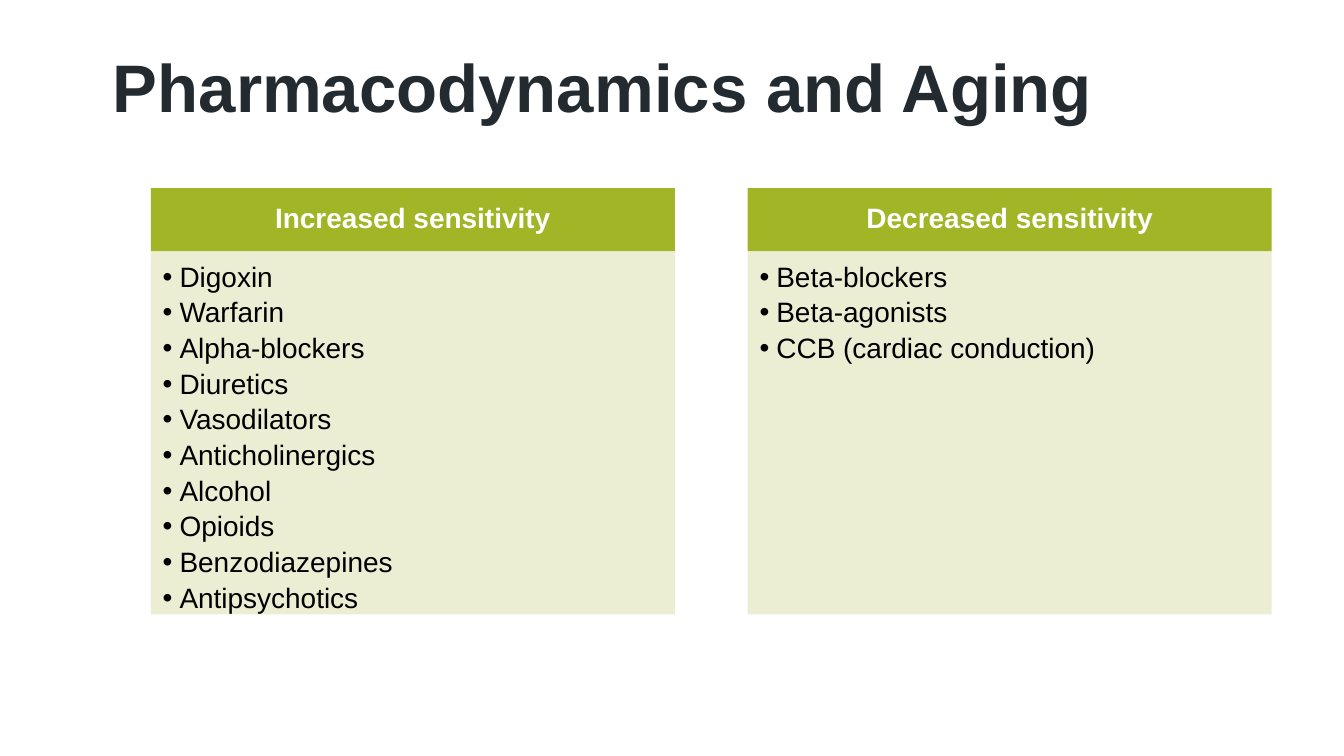
from lxml.etree import SubElement
from pptx import Presentation
from pptx.dml.color import RGBColor
from pptx.enum.shapes import MSO_SHAPE as Shape
from pptx.enum.text import MSO_ANCHOR as Anchor, PP_ALIGN as Align
from pptx.oxml.ns import qn
from pptx.util import Pt

TITLE = "Pharmacodynamics and Aging"
LISTS = [
    ("Increased sensitivity",
     ["Digoxin", "Warfarin", "Alpha-blockers", "Diuretics", "Vasodilators",
      "Anticholinergics", "Alcohol", "Opioids", "Benzodiazepines",
      "Antipsychotics"]),
    ("Decreased sensitivity",
     ["Beta-blockers", "Beta-agonists", "CCB (cardiac conduction)"]),
]

FONT = "Arial"
INK = RGBColor(0x23, 0x2B, 0x31)
GREEN = RGBColor(0xA2, 0xB5, 0x26)
PALE = RGBColor(0xC3, 0xCD, 0x7B)
WHITE = RGBColor(0xFF, 0xFF, 0xFF)
BLACK = RGBColor(0, 0, 0)

LEFT, TOP, WIDTH, STEP = 80.8, 100.8, 280.8, 319.7
HEAD, BODY = 33.7, 194.6
INDENT = 9


def set_frame(frame, anchor, left, top, right, bottom):
    frame.word_wrap = True
    frame.vertical_anchor = anchor
    frame.margin_left, frame.margin_top = Pt(left), Pt(top)
    frame.margin_right, frame.margin_bottom = Pt(right), Pt(bottom)


def write(para, text, size, color, align=Align.LEFT, bold=False):
    para.alignment = align
    para.line_spacing = 0.9
    run = para.add_run()
    run.text = text
    font = run.font
    font.name, font.size, font.bold = FONT, Pt(size), bold
    font.color.rgb = color


def add_box(slide, left, top, height, color):
    box = slide.shapes.add_shape(
        Shape.RECTANGLE, Pt(left), Pt(top), Pt(WIDTH), Pt(height))
    box.shadow.inherit = False
    box.fill.solid()
    box.fill.fore_color.rgb = color
    box.line.fill.background()
    return box


def add_bullet(para):
    props = para._p.get_or_add_pPr()
    props.set("marL", str(Pt(INDENT)))
    props.set("indent", str(-Pt(INDENT)))
    SubElement(props, qn("a:buFont")).set("typeface", FONT)
    SubElement(props, qn("a:buChar")).set("char", "•")


def add_list(slide, left, head, items):
    bar = add_box(slide, left, TOP, HEAD, GREEN)
    set_frame(bar.text_frame, Anchor.MIDDLE, 8.5, 5, 8.5, 5)
    write(bar.text_frame.paragraphs[0], head, 15, WHITE, Align.CENTER, True)

    panel = add_box(slide, left, TOP + HEAD, BODY, PALE)
    color = panel.fill._xPr.find(qn("a:solidFill"))[0]
    SubElement(color, qn("a:alpha")).set("val", "33000")
    frame = panel.text_frame
    set_frame(frame, Anchor.TOP, 6.4, 6.4, 8.5, 9.6)
    for i, item in enumerate(items):
        para = frame.add_paragraph() if i else frame.paragraphs[0]
        add_bullet(para)
        para.space_after = Pt(2.9)
        write(para, item, 15, BLACK)


def main():
    deck = Presentation()
    deck.slide_width, deck.slide_height = Pt(720), Pt(405)
    slide = deck.slides.add_slide(deck.slide_layouts[5])

    title = slide.shapes.title
    title.left, title.top = Pt(53.3), Pt(12.2)
    title.width, title.height = Pt(640), Pt(72.7)
    set_frame(title.text_frame, Anchor.MIDDLE, 7.2, 0, 7.2, 0)
    write(title.text_frame.paragraphs[0], TITLE, 36, INK, bold=True)

    for i, (head, items) in enumerate(LISTS):
        add_list(slide, LEFT + i * STEP, head, items)
    deck.save("out.pptx")


if __name__ == "__main__":
    main()
